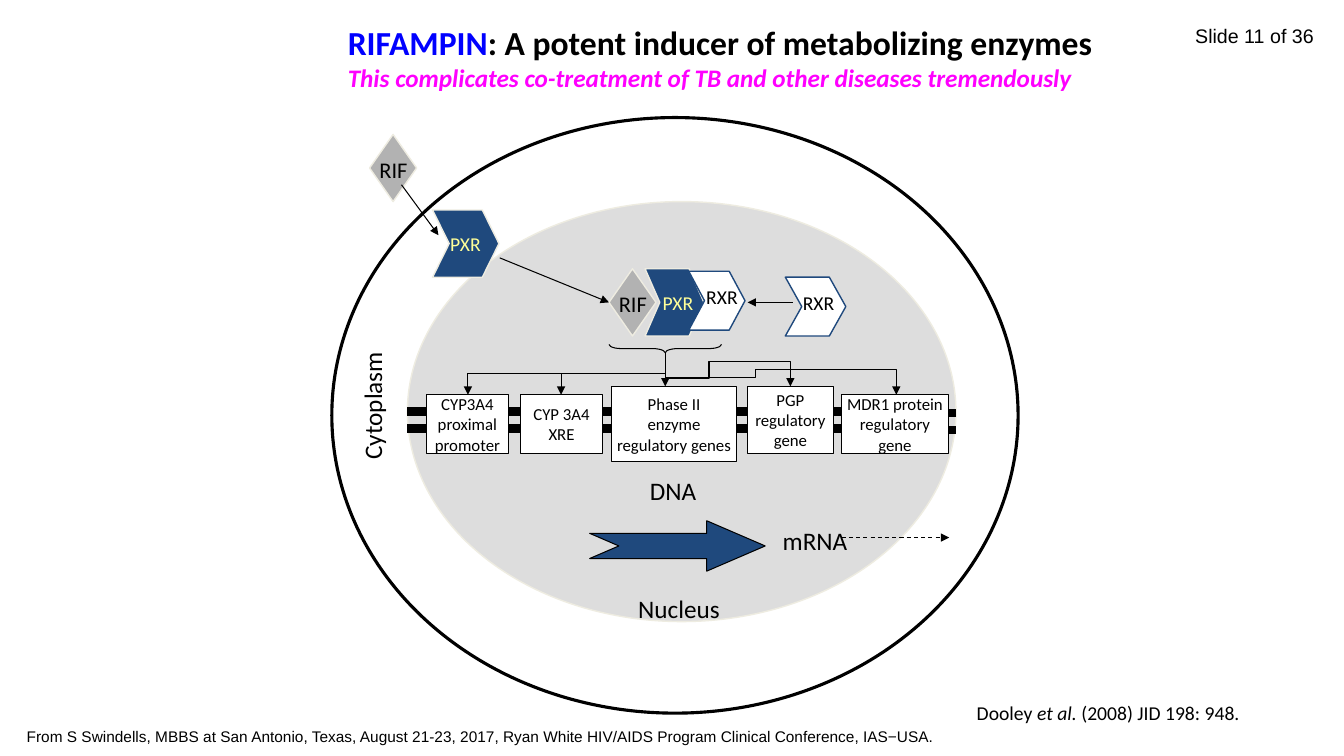
from dataclasses import dataclass

from lxml import etree
from pptx import Presentation
from pptx import util as u
from pptx.dml.color import RGBColor
from pptx.enum import dml, shapes, text
from pptx.oxml.ns import qn

BLACK = RGBColor(0x00, 0x00, 0x00)
WHITE = RGBColor(0xFF, 0xFF, 0xFF)
NAVY = RGBColor(0x1F, 0x49, 0x7D)
CREAM = RGBColor(0xEE, 0xEC, 0xE1)
PALE_GREY = RGBColor(0xDD, 0xDD, 0xDD)
GREY = RGBColor(0xB2, 0xB2, 0xB2)
YELLOW = RGBColor(0xFF, 0xFF, 0x99)
BLUE = RGBColor(0x00, 0x00, 0xFF)
MAGENTA = RGBColor(0xFF, 0x00, 0xFF)

# The slide is a grid of 160 columns and 90 rows; every place is (column, row)
COLUMNS, ROWS = 160, 90
Area = tuple[float, float, float, float]
Point = tuple[float, float]

deck = Presentation()
deck.slide_width, deck.slide_height = u.Inches(13.333), u.Inches(7.5)
page = deck.slides.add_slide(deck.slide_layouts[5])


@dataclass
class Span:
    words: str
    size: float = 18
    color: RGBColor = BLACK
    bold: bool = False
    italic: bool = False
    font: str = "Calibri"


@dataclass
class Molecule:
    name: str
    preset: shapes.MSO_SHAPE
    area: Area
    label_at: Point
    size: float
    fill: RGBColor
    line: RGBColor
    ink: RGBColor = BLACK
    adjust: tuple[float, ...] = ()


@dataclass
class Gene:
    lines: tuple[str, ...]
    area: Area


def x(column: float) -> int:
    return round(deck.slide_width * column / COLUMNS)


def y(row: float) -> int:
    return round(deck.slide_height * row / ROWS)


def place(area: Area) -> tuple[int, int, int, int]:
    left, top, width, height = area
    return x(left), y(top), x(width), y(height)


def write(frame, *paras: list[Span], align=text.PP_ALIGN.LEFT, wrap: bool = False,
          anchor=text.MSO_ANCHOR.TOP, fit=text.MSO_AUTO_SIZE.NONE) -> None:
    frame.word_wrap, frame.vertical_anchor, frame.auto_size = wrap, anchor, fit
    for index, spans in enumerate(paras):
        para = frame.add_paragraph() if index else frame.paragraphs[0]
        para.alignment = align
        for span in spans:
            run = para.add_run()
            run.text = span.words
            font = run.font
            font.name, font.size = span.font, u.Pt(span.size)
            font.bold, font.italic = span.bold, span.italic
            font.color.rgb = span.color


def label(area: Area, *spans: Span, turn: float = 0, **layout) -> None:
    box = page.shapes.add_textbox(*place(area))
    box.rotation = turn
    write(box.text_frame, list(spans), fit=text.MSO_AUTO_SIZE.SHAPE_TO_FIT_TEXT, **layout)


def outline(preset, area: Area, fill: RGBColor | None = None, line: RGBColor = BLACK,
            weight: float = 0.75, adjust: tuple[float, ...] = (), turn: float = 0):
    shape = page.shapes.add_shape(preset, *place(area))
    shape.shadow.inherit = False
    shape.rotation = turn
    for index, value in enumerate(adjust):
        shape.adjustments[index] = value
    if fill is None:
        shape.fill.background()
    else:
        shape.fill.solid()
        shape.fill.fore_color.rgb = fill
    shape.line.color.rgb, shape.line.width = line, u.Pt(weight)
    return shape


def link(kind, ends: tuple[int, int, int, int], weight: float = 0.75,
         arrow: bool = True, dashed: bool = False):
    line = page.shapes.add_connector(kind, *ends)
    line.line.color.rgb, line.line.width = BLACK, u.Pt(weight)
    if dashed:
        line.line.dash_style = dml.MSO_LINE.DASH
    properties = line.element.spPr
    if arrow:
        etree.SubElement(properties.find(qn("a:ln")), qn("a:tailEnd"), type="triangle")
    etree.SubElement(properties, qn("a:effectLst"))
    return line


def straight(start: Point, end: Point, **style) -> None:
    ends = x(start[0]), y(start[1]), x(end[0]), y(end[1])
    link(shapes.MSO_CONNECTOR.STRAIGHT, ends, **style)


def elbow(start: Point, end: Point, bends: tuple[float, ...]) -> None:
    """Leave start downwards: a turned elbow, mirrored when it heads right."""
    middle_x, middle_y = x((start[0] + end[0]) / 2), y((start[1] + end[1]) / 2)
    half_run, half_drop = x(abs(end[0] - start[0])) // 2, y(end[1] - start[1]) // 2
    line = link(shapes.MSO_CONNECTOR.ELBOW,
                (middle_x - half_drop, middle_y - half_run,
                 middle_x + half_drop, middle_y + half_run))
    frame = line.element.spPr.find(qn("a:xfrm"))
    rightward = end[0] > start[0]
    frame.set("rot", str((270 if rightward else 90) * 60000))
    if rightward:
        frame.set("flipH", "1")
    geometry = line.element.spPr.find(qn("a:prstGeom"))
    geometry.set("prst", f"bentConnector{len(bends) + 2}")
    guides = geometry.find(qn("a:avLst"))
    for number, bend in enumerate(bends, 1):
        etree.SubElement(guides, qn("a:gd"), name=f"adj{number}",
                         fmla=f"val {round(bend * 100000)}")


def draw_molecule(molecule: Molecule) -> None:
    outline(molecule.preset, molecule.area, molecule.fill, molecule.line, 1, molecule.adjust)
    label((*molecule.label_at, 7.2, 4.2), Span(molecule.name, molecule.size, molecule.ink))


def rif(left: float, top: float) -> Molecule:
    return Molecule("RIF", shapes.MSO_SHAPE.DIAMOND, (left, top, 5.6, 8),
                    (left, top + 2), 16, GREY, CREAM)


def pxr(left: float, top: float, width: float) -> Molecule:
    return Molecule("PXR", shapes.MSO_SHAPE.CHEVRON, (left, top, width, 8),
                    (left + 0.9, top + 2), 14, NAVY, CREAM, YELLOW, (0.25,))


def rxr(left: float, top: float, width: float) -> Molecule:
    return Molecule("RXR", shapes.MSO_SHAPE.CHEVRON, (left, top, width, 7),
                    (left + 0.9, top + 1), 14, WHITE, NAVY, BLACK, (0.28,))


# Title, slide counter and source lines
title = page.shapes.title
title.left, title.top, title.width, title.height = place((40.2, 2, 91.8, 9.7))
write(title.text_frame,
      [Span("RIFAMPIN", 24, BLUE, bold=True),
       Span(": A potent inducer of metabolizing enzymes", 24, bold=True)],
      [Span("This complicates co-treatment of TB and other diseases tremendously",
            18, MAGENTA, bold=True, italic=True)])
label((131, 2.2, 26.6, 4.1), Span("Slide 11 of 36", 14, font="Arial"),
      align=text.PP_ALIGN.RIGHT, wrap=True)
label((2, 86, 112, 3.5),
      Span("From S Swindells, MBBS at San Antonio, Texas, August 21-23, 2017, "
           "Ryan White HIV/AIDS Program Clinical Conference, IAS−USA.", 11, font="Arial"),
      wrap=True)
label((115.1, 82.9, 34, 4.1), Span("Dooley ", 14), Span("et al. ", 14, italic=True),
      Span("(2008) JID 198: 948.", 14))

# Cell and nucleus
outline(shapes.MSO_SHAPE.OVAL, (39.5, 14, 81.7, 70.9), weight=2.25)
outline(shapes.MSO_SHAPE.OVAL, (48.5, 24, 65.3, 50), PALE_GREY, CREAM, 1)
label((74.8, 70, 12.2, 4.8), Span("Nucleus"))
label((36.6, 45.8, 15.4, 4.8), Span("Cytoplasm"), turn=270)

# Molecules and the way they join
for item in (pxr(51.5, 25, 7.9), rxr(93.5, 33, 7.2), rif(44, 16),
             rif(72.5, 32), pxr(76.8, 32, 7), rxr(82, 32.3, 6.7)):
    draw_molecule(item)
for start, end in (((47.8, 22), (52.2, 28)), ((59.5, 30.7), (72.5, 36)),
                   ((94.4, 36), (89, 36))):
    straight(start, end)

# Double DNA strand, seen between the genes
STRANDS = ((48.5, 50.8, 49), (60.5, 62.8, 49), (70.2, 75.5, 49),
           (85.2, 89, 49), (95, 100.2, 49), (111.5, 113.8, 49.2))
for left, right, row in STRANDS:
    for strand_row in (row, row + 2):
        straight((left, strand_row), (right, strand_row), weight=6, arrow=False)

# Genes
GENES = (
    Gene(("CYP3A4", "proximal", "promoter"), (50.8, 47, 9.7, 7)),
    Gene(("CYP 3A4", "XRE"), (62, 47, 9.7, 7)),
    Gene(("Phase II", "enzyme", "regulatory genes"), (72.8, 46, 14.9, 9)),
    Gene(("PGP", "regulatory", "gene"), (89, 46, 10.2, 8)),
    Gene(("MDR1 protein", "regulatory", "gene"), (100.2, 47, 12.7, 7)),
)
for gene in GENES:
    box = outline(shapes.MSO_SHAPE.RECTANGLE, gene.area, WHITE)
    write(box.text_frame, *([Span(line, 12)] for line in gene.lines),
          align=text.PP_ALIGN.CENTER, anchor=text.MSO_ANCHOR.MIDDLE)
label((76.2, 56, 7.9, 4.8), Span("DNA"))

# Brace under the complex, with arrows to each gene
COMPLEX = (79.2, 42)
outline(shapes.MSO_SHAPE.LEFT_BRACE, (78.7, 34.8, 1, 13.4), adjust=(1.5, 0.5), turn=270)
straight(COMPLEX, (79.2, 46))
for end, bends in (((55.7, 47), (0.5,)), ((66.8, 47), (0.5,)),
                   ((94.1, 46), (0.75, 0.35, 0.25)), ((106.7, 47), (0.6, 0.39, 0.4))):
    elbow(COMPLEX, end, bends)

# Transcription to mRNA
outline(shapes.MSO_SHAPE.NOTCHED_RIGHT_ARROW, (70.2, 62, 20.9, 6), NAVY, adjust=(0.5, 1.16))
label((92, 62, 10.2, 4.8), Span("mRNA"))
straight((100.2, 64), (113, 64), dashed=True)

deck.save("out.pptx")
